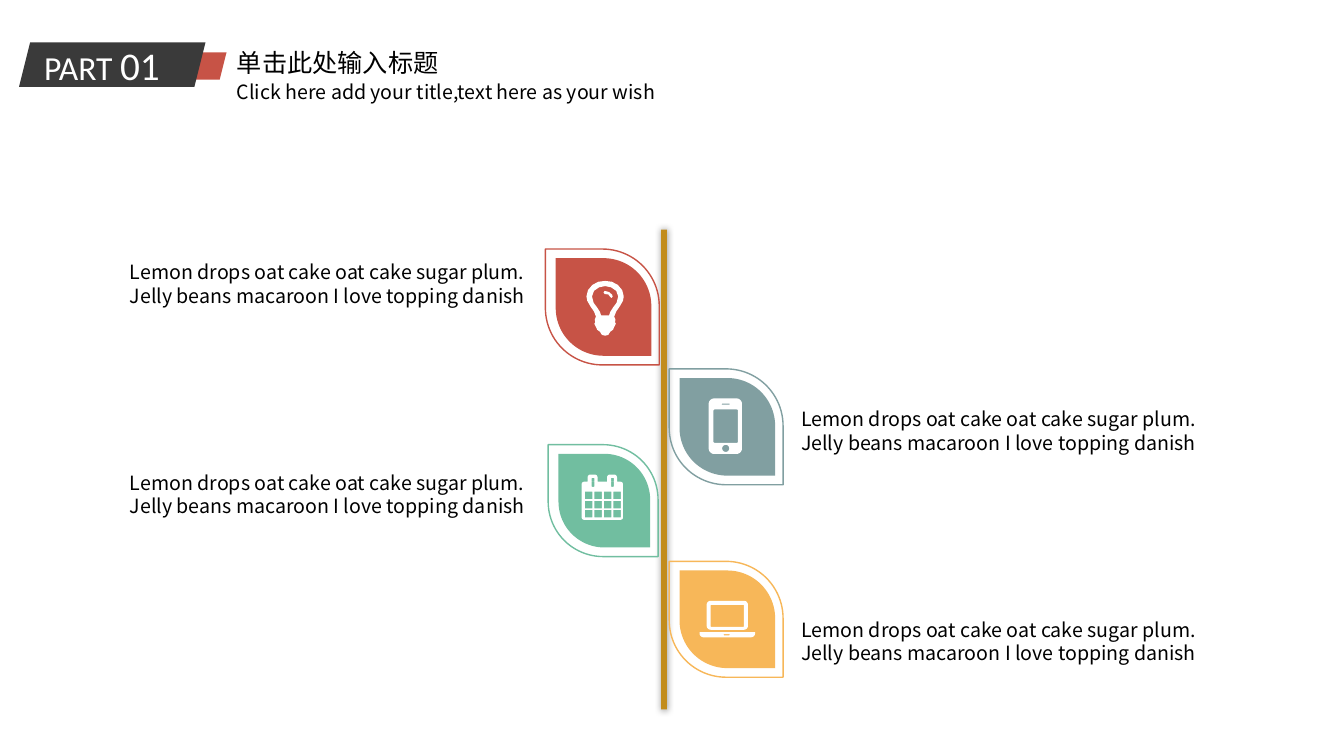
"""Build a slide with four leaves on a central stem, each with an icon and a caption."""
import math

import lxml.etree
import pptx
import pptx.dml.color
import pptx.enum.shapes
import pptx.enum.text
import pptx.oxml.ns
import pptx.util

Cm = pptx.util.Cm
Pt = pptx.util.Pt
SHAPES = pptx.enum.shapes.MSO_SHAPE
CJK = "Noto Sans CJK SC"
WHITE, BLACK, DARK, RED = "FFFFFF", "000000", "3A3A3A", "C75346"

BANNER = [((4.34, 1.32, 1.37, 0.69), RED), ((0.48, 1.07, 4.7, 1.12), DARK)]
HEADINGS = [
    ((5.72, 1.88, 12.75, 0.86),
     [("Click here add your title,text here as your wish", 14, CJK, BLACK)]),
    ((5.72, 1.07, 8.05, 1.02), [("单击此处输入标题", 18, CJK, BLACK)]),
    ((0.86, 0.91, 3.91, 1.45),
     [("PART ", 24, "Calibri", WHITE), ("01", 28, "Calibri", WHITE)]),
]
STEM = (16.66, 5.79, 0.15, 12.09)
CAPTION = "Lemon drops oat cake oat cake sugar plum. Jelly beans macaroon I love topping danish"
CAPTION_SIZE = (10.36, 1.27)
CAPTION_SPOTS = [(19.99, 10.26), (19.99, 15.57), (3.07, 6.55), (3.07, 11.86)]

LEAF_INSET = (0.26, 0.23)
LEAF_SHRINK = 0.46
BULB_GLASS = [(0, 0), (0.17, 0.02), (0.32, 0.1), (0.43, 0.23), (0.47, 0.39),
              (0.45, 0.5), (0.37, 0.64), (0.28, 0.77), (0.23, 0.9), (0.26, 0.97),
              (0.25, 1.04), (0.27, 1.08), (0.22, 1.18), (0.2, 1.23), (0.13, 1.28),
              (0.08, 1.36), (0, 1.38)]
BULB_HOLLOW = [(0, 0.13), (0.15, 0.16), (0.28, 0.25), (0.33, 0.39), (0.29, 0.55),
               (0.2, 0.67), (0.13, 0.78), (0.1, 0.87), (0, 0.87)]
BULB_GLINT = [(0.46, 0.25), (0.57, 0.28), (0.65, 0.35), (0.66, 0.4), (0.63, 0.43),
              (0.59, 0.39), (0.55, 0.34), (0.46, 0.33), (0.43, 0.29)]


def mirrored(profile, axis=0.47):
    right = [(axis + x, y) for x, y in profile]
    left = [(axis - x, y) for x, y in reversed(profile[1:-1])]
    return right + left


def rounded(left, top, width, height, top_radius=0, bottom_radius=0):
    right, bottom = left + width, top + height
    corners = [(left, top, 1, 1, top_radius, 180), (right, top, -1, 1, top_radius, 270),
               (right, bottom, -1, -1, bottom_radius, 0), (left, bottom, 1, -1, bottom_radius, 90)]
    points = []
    for x, y, inward_x, inward_y, radius, start in corners:
        for step in range(7 if radius else 1):
            angle = math.radians(start + 15 * step)
            points.append((x + radius * (inward_x + math.cos(angle)),
                           y + radius * (inward_y + math.sin(angle))))
    return points


BULB = [mirrored(BULB_GLASS), mirrored(BULB_HOLLOW), BULB_GLINT]
PHONE = [rounded(0, 0, 0.84, 1.4, 0.14, 0.14), rounded(0.12, 0.28, 0.62, 0.84, 0.03, 0.03),
         rounded(0.33, 0.13, 0.2, 0.03, 0.01, 0.01), rounded(0.34, 1.17, 0.18, 0.18, 0.09, 0.09)]
LAPTOP = [rounded(0, 0.79, 1.4, 0.13, 0, 0.1), rounded(0.18, 0, 1.04, 0.73, 0.1, 0.1),
          rounded(0.28, 0.1, 0.84, 0.56, 0.02, 0.02), rounded(0.61, 0.84, 0.15, 0.03, 0.01, 0.01)]
CALENDAR = [rounded(0, 0.18, 1.04, 0.96, 0.06, 0.06)]
CALENDAR += [rounded(x, 0, 0.25, 0.18, 0.07) for x in (0.15, 0.64)]
CALENDAR += [rounded(x, 0.08, 0.07, 0.23, 0.02, 0.02) for x in (0.25, 0.74)]
CALENDAR += [rounded(0.08 + 0.24 * column, 0.43 + 0.23 * row, 0.19, 0.19)
             for row in range(3) for column in range(4)]

LEAVES = [
    ("71BEA0", (13.79, 11.23, 2.82, 2.77), CALENDAR, (14.66, 11.96)),
    (RED, (13.72, 6.3, 2.92, 2.87), BULB, (14.78, 7.08)),
    ("819FA1", (16.84, 9.32, 2.92, 2.87), PHONE, (17.86, 10.04)),
    ("F7B759", (16.84, 14.17, 2.92, 2.87), LAPTOP, (17.63, 15.14)),
]

deck = pptx.Presentation()
deck.slide_width, deck.slide_height = Cm(33.87), Cm(19.05)
slide = deck.slides.add_slide(deck.slide_layouts[6])


def rgb(code):
    return pptx.dml.color.RGBColor.from_string(code)


def paint(shape, fill=None, line=None):
    shape.shadow.inherit = False
    if fill:
        shape.fill.solid()
        shape.fill.fore_color.rgb = rgb(fill)
    else:
        shape.fill.background()
    if line:
        shape.line.color.rgb = rgb(line)
        shape.line.width = Pt(1)
    else:
        shape.line.fill.background()


def add_preset(kind, box, fill=None, line=None):
    shape = slide.shapes.add_shape(kind, *map(Cm, box))
    paint(shape, fill, line)
    return shape


def add_leaf(box, fill=None, line=None):
    leaf = add_preset(SHAPES.ROUND_2_DIAG_RECTANGLE, box, fill, line)
    leaf.adjustments[0], leaf.adjustments[1] = 0.5, 0
    leaf.rotation = 270


def add_icon(contours, left, top):
    placed = [[(Cm(left + x), Cm(top + y)) for x, y in contour] for contour in contours]
    builder = slide.shapes.build_freeform(*placed[0][0])
    for number, contour in enumerate(placed):
        if number:
            builder.move_to(*contour[0])
        builder.add_line_segments(contour[1:], close=True)
    paint(builder.convert_to_shape(), WHITE)


def add_text(box, runs):
    frame = slide.shapes.add_textbox(*map(Cm, box)).text_frame
    frame.word_wrap = True
    for words, size, face, color in runs:
        run = frame.paragraphs[0].add_run()
        run.text = words
        run.font.size, run.font.name = Pt(size), face
        run.font.color.rgb = rgb(color)
        east_asian = lxml.etree.SubElement(run.font._element, pptx.oxml.ns.qn("a:ea"))
        east_asian.set("typeface", face)
    return frame


def add_glow(shape, color, blur, opacity):
    qn = pptx.oxml.ns.qn
    effects = shape._element.spPr.find(qn("a:effectLst"))
    shadow = lxml.etree.SubElement(effects, qn("a:outerShdw"), blurRad=str(Pt(blur)),
                                   dist="0", algn="ctr", rotWithShape="0")
    tint = lxml.etree.SubElement(shadow, qn("a:srgbClr"), val=color)
    lxml.etree.SubElement(tint, qn("a:alpha"), val=str(opacity * 1000))


for box, color in BANNER:
    add_preset(SHAPES.PARALLELOGRAM, box, color)
for box, runs in HEADINGS:
    add_text(box, runs)

add_glow(add_preset(SHAPES.RECTANGLE, STEM, "C28C1C"), BLACK, 5, 40)
for color, (left, top, width, height), icon, icon_spot in LEAVES:
    add_leaf((left, top, width, height), line=color)
    add_leaf((left + LEAF_INSET[0], top + LEAF_INSET[1],
              width - LEAF_SHRINK, height - LEAF_SHRINK), fill=color)
    add_icon(icon, *icon_spot)

for spot in CAPTION_SPOTS:
    caption = add_text(spot + CAPTION_SIZE, [(CAPTION, 14, CJK, BLACK)])
    caption.margin_left = caption.margin_right = caption.margin_top = caption.margin_bottom = 0
    caption.paragraphs[0].alignment = pptx.enum.text.PP_ALIGN.CENTER
    caption.paragraphs[0].space_before = Pt(7.5)

deck.save("out.pptx")
